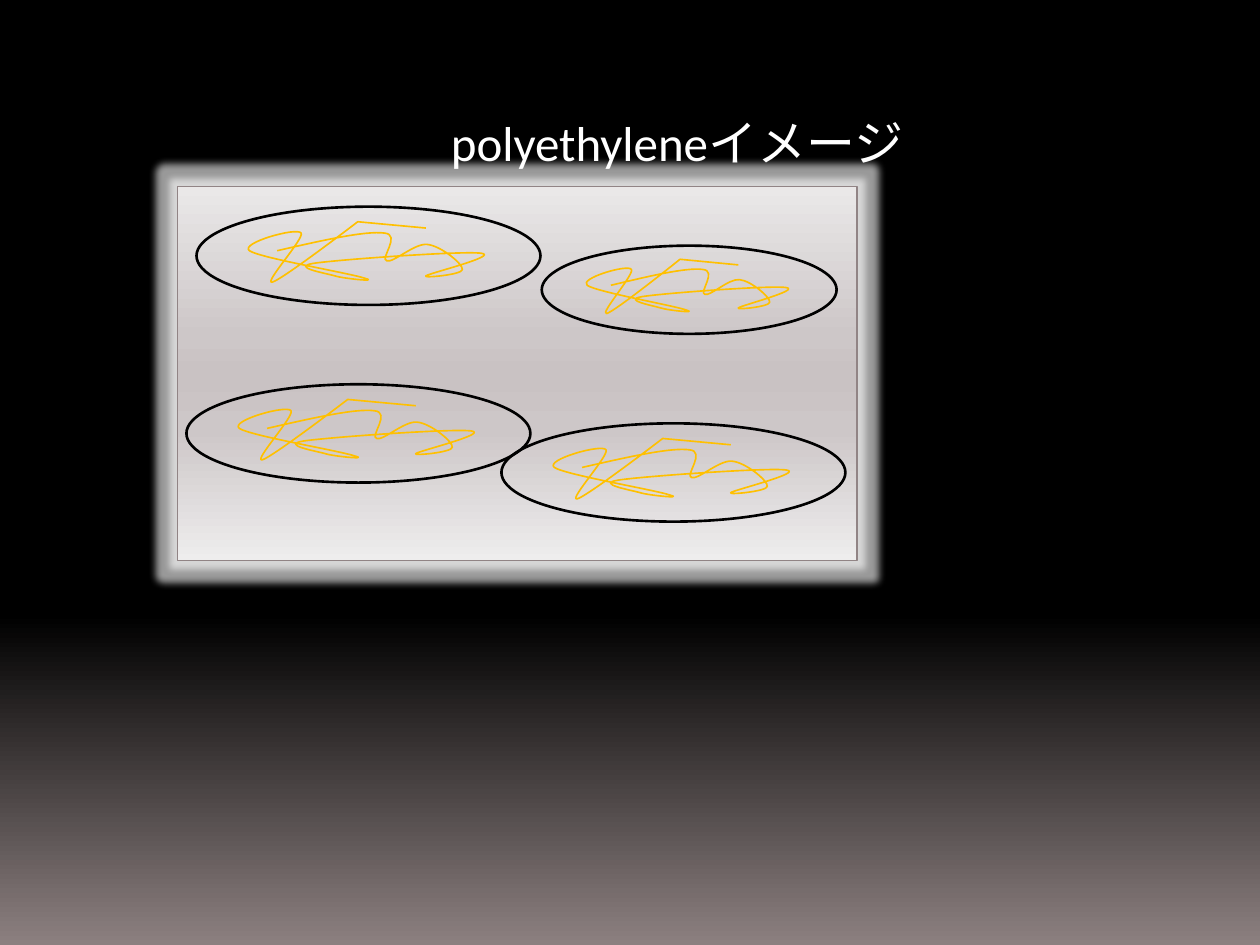
from dataclasses import dataclass

from lxml.etree import SubElement
from pptx import Presentation
from pptx.dml.color import RGBColor as Rgb
from pptx.enum.shapes import MSO_SHAPE as Kind
from pptx.enum.text import MSO_AUTO_SIZE as Fit
from pptx.oxml.ns import qn
from pptx.util import Pt

UNIT = 9144  # EMU in one px, 100 px to the inch


def emu(px: float) -> int:
    return round(px * UNIT)


@dataclass(frozen=True)
class Theme:
    font: str = "Calibri"
    size: int = 28
    text: str = "FFFFFF"
    ring: str = "000000"
    chain: str = "FFC000"
    edge: str = "918485"
    glow: str = "FFFFFF"
    thin: float = 0.94
    bold: float = 1.5
    back: tuple = ((0, "000000"), (65, "000000"), (100, "8C8080"))
    panel: tuple = ((0, "EAE8E8"), (40, "CDC7C8"), (50, "C9C2C3"),
                    (65, "CDC7C8"), (100, "EEEDED"))


@dataclass(frozen=True)
class Bubble:
    left: int
    top: int
    width: int = 273
    height: int = 78


THEME = Theme()
FULL = Bubble(0, 0)
BUBBLES = (Bubble(148, 305), Bubble(398, 336), Bubble(156, 164),
           Bubble(430, 195, 234, 70))

# Tangled chain inside a full-size bubble: start, Bezier triples, straight end
INSET = (34, 12)
START = (30, 23)
CURVES = (
    ((65, 15), (100, 7), (115, 9)),
    ((129, 10), (111, 30), (117, 31)),
    ((122, 33), (139, 17), (149, 18)),
    ((160, 19), (178, 34), (177, 38)),
    ((177, 42), (145, 45), (148, 43)),
    ((150, 41), (207, 27), (192, 25)),
    ((177, 23), (79, 30), (59, 33)),
    ((40, 36), (69, 41), (76, 43)),
    ((82, 45), (111, 48), (100, 45)),
    ((89, 41), (17, 29), (8, 23)),
    ((0, 17), (46, 4), (49, 9)),
    ((52, 13), (19, 49), (26, 48)),
    ((34, 46), (94, 0), (94, 0)),
)
END = (148, 5)


def shade(fill, node, stops: tuple) -> None:
    """Give a fill a top-down gradient with any number of stops."""
    fill.gradient()
    fill.gradient_angle = 270
    ramp = node.find(".//" + qn("a:gsLst"))
    for old in list(ramp):
        ramp.remove(old)
    for pos, tone in stops:
        stop = SubElement(ramp, qn("a:gs"), pos=str(pos * 1000))
        SubElement(stop, qn("a:srgbClr"), val=tone)


def stroke(shape, tone: str, width: float) -> None:
    shape.shadow.inherit = False
    shape.line.color.rgb = Rgb.from_string(tone)
    shape.line.width = Pt(width)


def draw_panel(slide) -> None:
    panel = slide.shapes.add_shape(Kind.RECTANGLE, emu(141), emu(148),
                                   emu(539), emu(297))
    stroke(panel, THEME.edge, THEME.thin)
    shade(panel.fill, panel._element.spPr, THEME.panel)
    # Soft glow around the edge
    effect = panel._element.spPr.find(qn("a:effectLst"))
    glow = SubElement(effect, qn("a:glow"), rad=str(emu(11)))
    tone = SubElement(glow, qn("a:srgbClr"), val=THEME.glow)
    SubElement(tone, qn("a:alpha"), val="60000")


def draw_chain(shapes, item: Bubble) -> None:
    def place(point: tuple) -> tuple:
        x, y = (a + b for a, b in zip(point, INSET))
        return (emu(item.left + x * item.width / FULL.width),
                emu(item.top + y * item.height / FULL.height))

    pen = shapes.build_freeform(*place(START))
    points = [place(p) for curve in CURVES for p in curve]
    pen.add_line_segments(points + [place(END)], close=False)
    chain = pen.convert_to_shape()
    chain.fill.background()
    stroke(chain, THEME.chain, THEME.thin)
    # Merge each three line steps into one Bezier curve
    steps = list(chain._element.iter(qn("a:lnTo")))
    for i in range(0, 3 * len(CURVES), 3):
        trio = steps[i:i + 3]
        trio[0].tag
        curve = SubElement(trio[0].getparent(), qn("a:cubicBezTo"))
        trio[0].addprevious(curve)
        for step in trio:
            curve.append(step[0])
            step.getparent().remove(step)


def draw_bubble(slide, item: Bubble) -> None:
    group = slide.shapes.add_group_shape()
    ring = group.shapes.add_shape(Kind.OVAL, emu(item.left), emu(item.top),
                                  emu(item.width), emu(item.height))
    ring.fill.background()
    stroke(ring, THEME.ring, THEME.bold)
    draw_chain(group.shapes, item)


def draw_title(slide) -> None:
    box = slide.shapes.add_textbox(emu(348), emu(84), emu(388), emu(57))
    frame = box.text_frame
    frame.word_wrap = False
    frame.auto_size = Fit.SHAPE_TO_FIT_TEXT
    run = frame.paragraphs[0].add_run()
    run.text = "polyethyleneイメージ"
    run.font.name = THEME.font
    run.font.size = Pt(THEME.size)
    run.font.color.rgb = Rgb.from_string(THEME.text)


def main() -> None:
    deck = Presentation()
    deck.slide_width, deck.slide_height = emu(1000), emu(750)
    slide = deck.slides.add_slide(deck.slide_layouts[6])
    shade(slide.background.fill, slide._element, THEME.back)
    draw_panel(slide)
    for item in BUBBLES:
        draw_bubble(slide, item)
    draw_title(slide)
    deck.save("out.pptx")


if __name__ == "__main__":
    main()
